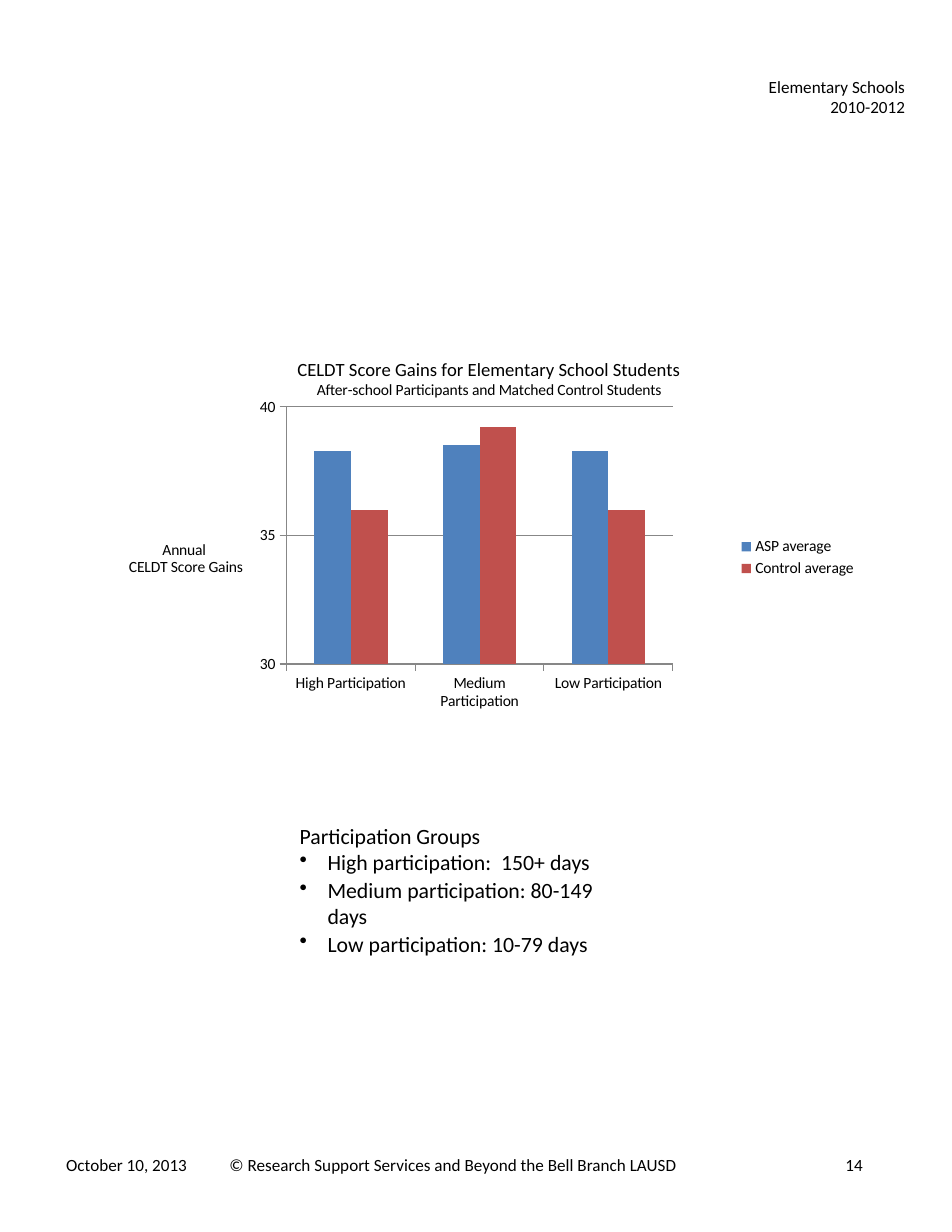
import pptx
import pptx.chart.data
import pptx.dml.color
import pptx.enum.chart
import pptx.enum.text
import pptx.oxml
import pptx.oxml.ns
import pptx.util

Pt = pptx.util.Pt
ALIGN = pptx.enum.text.PP_ALIGN
BLACK = pptx.dml.color.RGBColor(0x00, 0x00, 0x00)
GRAY = pptx.dml.color.RGBColor(0x87, 0x87, 0x87)
BLUE = pptx.dml.color.RGBColor(0x4F, 0x81, 0xBD)
RED = pptx.dml.color.RGBColor(0xC0, 0x50, 0x4D)
FONT = "Calibri"

GROUPS = ["High Participation", "Medium Participation", "Low Participation"]
GAINS = [
    ("ASP average", (38.3, 38.5, 38.3), BLUE),
    ("Control average", (36, 39.2, 36), RED),
]
GROUP_DAYS = [
    "High participation:  150+ days",
    "Medium participation: 80-149 days",
    "Low participation: 10-79 days",
]


def style_font(font, size):
    font.name = FONT
    font.size = Pt(size)
    font.bold = False
    font.color.rgb = BLACK


def fill_lines(frame, lines, sizes, align):
    for index, (line, size) in enumerate(zip(lines, sizes)):
        paragraph = frame.paragraphs[0] if index == 0 else frame.add_paragraph()
        paragraph.alignment = align
        run = paragraph.add_run()
        run.text = line
        style_font(run.font, size)


def add_text(slide, box, lines, size, align=ALIGN.LEFT, inset=True, wrap=True):
    frame = slide.shapes.add_textbox(*map(Pt, box)).text_frame
    frame.word_wrap = wrap
    if not inset:
        frame.margin_left = frame.margin_right = 0
        frame.margin_top = frame.margin_bottom = 0
    fill_lines(frame, lines, [size] * len(lines), align)
    return frame


def indent(paragraph, left, hanging=0):
    properties = paragraph._p.get_or_add_pPr()
    properties.set("marL", str(Pt(left)))
    properties.set("indent", str(-Pt(hanging)))
    return properties


def add_bullet(paragraph):
    properties = indent(paragraph, 36.5, 18)
    bullet = pptx.oxml.parse_xml(
        f'<a:buChar {pptx.oxml.ns.nsdecls("a")} char="•"/>')
    properties.append(bullet)


def place(owner, x, y, w=None, h=None):
    qn = pptx.oxml.ns.qn
    for stale in owner.findall(qn("c:layout")):
        owner.remove(stale)
    parts = [("xMode", "edge"), ("yMode", "edge"), ("x", x), ("y", y)]
    if w is not None:
        parts = [("layoutTarget", "inner")] + parts + [("w", w), ("h", h)]
    inner = "".join(f'<c:{tag} val="{value}"/>' for tag, value in parts)
    layout = pptx.oxml.parse_xml(
        f'<c:layout {pptx.oxml.ns.nsdecls("c")}>'
        f'<c:manualLayout>{inner}</c:manualLayout></c:layout>')
    owner.insert(0 if owner.find(qn("c:tx")) is None else 1, layout)


def style_axis(axis):
    axis.major_tick_mark = pptx.enum.chart.XL_TICK_MARK.OUTSIDE
    axis.minor_tick_mark = pptx.enum.chart.XL_TICK_MARK.NONE
    axis.format.line.color.rgb = GRAY
    axis.format.line.width = Pt(0.75)
    style_font(axis.tick_labels.font, 10)


def add_gains_chart(slide):
    gains = pptx.chart.data.CategoryChartData()
    gains.categories = GROUPS
    for name, values, _ in GAINS:
        gains.add_series(name, values)
    chart = slide.shapes.add_chart(
        pptx.enum.chart.XL_CHART_TYPE.COLUMN_CLUSTERED,
        Pt(66), Pt(216), Pt(492), Pt(285), gains).chart
    style_font(chart.font, 10)

    chart.has_title = True
    fill_lines(chart.chart_title.text_frame,
               ["CELDT Score Gains for Elementary School Students",
                "After-school Participants and Matched Control Students"],
               [12, 10], ALIGN.CENTER)
    place(chart.chart_title._element, 0.25, 0.04)

    chart.has_legend = True
    chart.legend.position = pptx.enum.chart.XL_LEGEND_POSITION.RIGHT
    chart.legend.include_in_layout = False
    style_font(chart.legend.font, 10)

    plot = chart.plots[0]
    plot.gap_width = 150
    plot.overlap = 0
    plot.vary_by_categories = False
    for series, (_, _, color) in zip(plot.series, GAINS):
        series.format.fill.solid()
        series.format.fill.fore_color.rgb = color
    place(chart._chartSpace.chart.plotArea, 0.24, 0.16, 0.505, 0.58)

    style_axis(chart.category_axis)
    score_axis = chart.value_axis
    style_axis(score_axis)
    score_axis.minimum_scale = 30
    score_axis.maximum_scale = 40
    score_axis.major_unit = 5
    score_axis.tick_labels.number_format = "0"
    score_axis.tick_labels.number_format_is_linked = False
    score_axis.major_gridlines.format.line.color.rgb = GRAY
    score_axis.major_gridlines.format.line.width = Pt(0.75)

    score_title = score_axis.axis_title
    fill_lines(score_title.text_frame, ["Annual ", "CELDT Score Gains"],
               [10, 10], ALIGN.CENTER)
    body = score_title.text_frame._txBody.bodyPr
    body.set("rot", "0")
    body.set("vert", "horz")
    place(score_title._element, 0.03, 0.45)


def add_participation_groups(slide):
    frame = add_text(slide, (167, 525.6, 232.6, 77),
                     ["Participation Groups"] + GROUP_DAYS, 14)
    heading, *groups = frame.paragraphs
    indent(heading, 18.5)
    for group in groups:
        add_bullet(group)
    for group in groups[1:]:
        group.space_before = Pt(1)


def add_footer(slide):
    for left, width, text in [
        (42.5, 82, "October 10, 2013"),
        (147.5, 288, "© Research Support Services and Beyond the Bell Branch LAUSD"),
        (543.5, 15, "14"),
    ]:
        add_text(slide, (left, 742.3, width, 14), [text], 11, inset=False)


def main():
    deck = pptx.Presentation()
    deck.slide_width = Pt(612)
    deck.slide_height = Pt(792)
    slide = deck.slides.add_slide(deck.slide_layouts[6])
    add_text(slide, (486, 45.4, 103, 34), ["Elementary Schools", "2010-2012"],
             11, ALIGN.RIGHT, wrap=False)
    add_participation_groups(slide)
    add_footer(slide)
    add_gains_chart(slide)
    deck.save("out.pptx")


if __name__ == "__main__":
    main()
